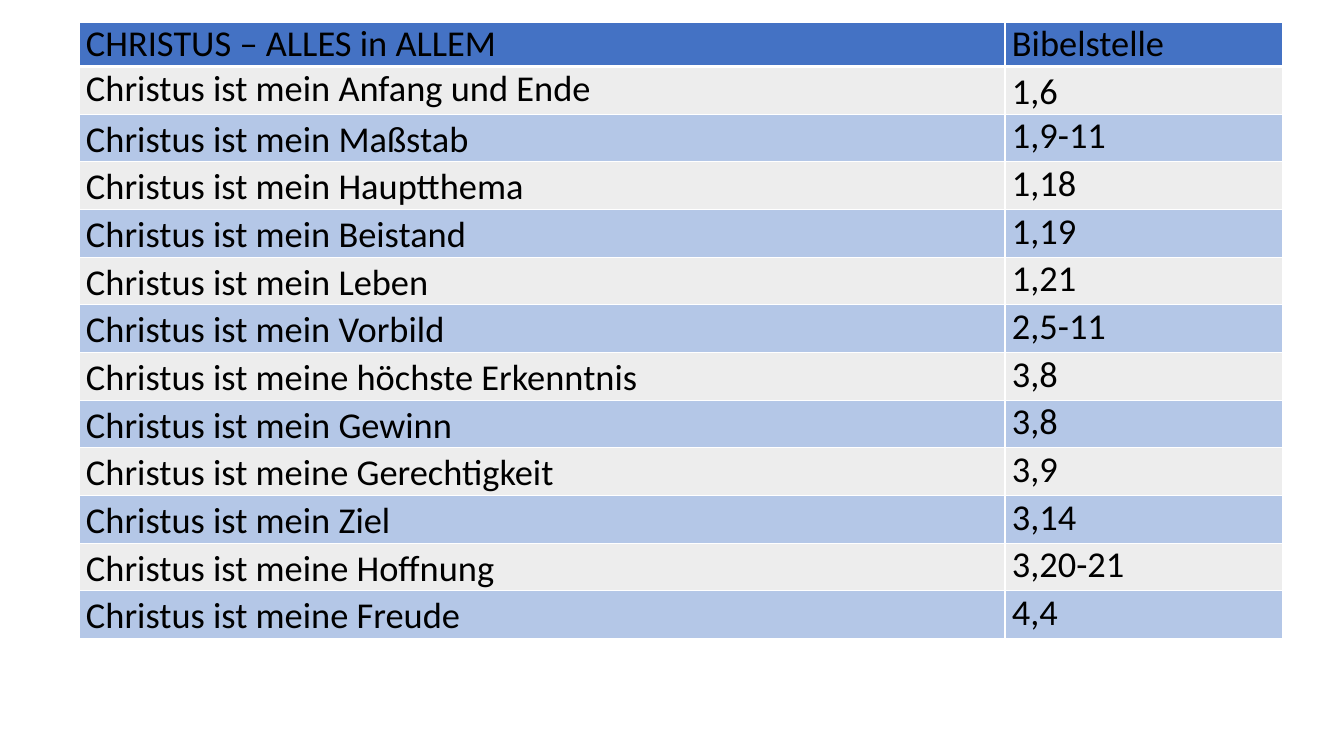
from lxml import etree
from pptx import Presentation
from pptx.dml.color import RGBColor
from pptx.oxml.ns import qn
from pptx.util import Pt

EMU_PER_PX = 12192000 / 1344
BLANK_LAYOUT = 6
FONT = "Calibri"
FONT_SIZE = 26
LOOSE_SPACING = 1.07
COLORS = {
    "text": "000000",
    "border": "FFFFFF",
    "header": "4472C4",
    "light": "EDEDED",
    "blue": "B4C7E7",
}
COLUMN_WIDTHS = (926, 278)
HEADER_HEIGHT = 41
ROW_HEIGHT = 42
HEADER = ("CHRISTUS – ALLES in ALLEM", "Bibelstelle")
VERSES = (
    ("Christus ist mein Anfang und Ende", "1,6"),
    ("Christus ist mein Maßstab", "1,9-11"),
    ("Christus ist mein Hauptthema", "1,18"),
    ("Christus ist mein Beistand", "1,19"),
    ("Christus ist mein Leben", "1,21"),
    ("Christus ist mein Vorbild", "2,5-11"),
    ("Christus ist meine höchste Erkenntnis", "3,8"),
    ("Christus ist mein Gewinn", "3,8"),
    ("Christus ist meine Gerechtigkeit", "3,9"),
    ("Christus ist mein Ziel", "3,14"),
    ("Christus ist meine Hoffnung", "3,20-21"),
    ("Christus ist meine Freude", "4,4"),
)


def px(length):
    return round(length * EMU_PER_PX)


def set_borders(cell, top=1, bottom=1):
    """Draw the four cell edges; the lines must come before the fill in the XML."""
    properties = cell._tc.get_or_add_tcPr()
    edges = (("a:lnL", 1), ("a:lnR", 1), ("a:lnT", top), ("a:lnB", bottom))
    for position, (tag, width) in enumerate(edges):
        line = etree.Element(qn(tag), w=str(Pt(width)))
        fill = etree.SubElement(line, qn("a:solidFill"))
        etree.SubElement(fill, qn("a:srgbClr"), val=COLORS["border"])
        properties.insert(position, line)


def fill_cell(cell, text, color, line_spacing=None):
    cell.fill.solid()
    cell.fill.fore_color.rgb = RGBColor.from_string(COLORS[color])
    cell.margin_left = cell.margin_right = px(7)
    cell.margin_top = cell.margin_bottom = 0
    paragraph = cell.text_frame.paragraphs[0]
    if line_spacing:
        paragraph.line_spacing = line_spacing
    run = paragraph.add_run()
    run.text = text
    run.font.name = FONT
    run.font.size = Pt(FONT_SIZE)
    run.font.bold = False
    run.font.color.rgb = RGBColor.from_string(COLORS["text"])


def add_verse_table(slide, left, top):
    height = HEADER_HEIGHT + ROW_HEIGHT * len(VERSES)
    table = slide.shapes.add_table(
        len(VERSES) + 1, len(HEADER),
        px(left), px(top), px(sum(COLUMN_WIDTHS)), px(height),
    ).table
    for column, width in zip(table.columns, COLUMN_WIDTHS):
        column.width = px(width)

    table.rows[0].height = px(HEADER_HEIGHT)
    for column_index, text in enumerate(HEADER):
        cell = table.cell(0, column_index)
        fill_cell(cell, text, "header")
        set_borders(cell, bottom=3)

    for row_index, verse in enumerate(VERSES, start=1):
        table.rows[row_index].height = px(ROW_HEIGHT)
        color = "light" if row_index % 2 else "blue"
        loose_column = 1 if row_index == 1 else 0
        for column_index, text in enumerate(verse):
            cell = table.cell(row_index, column_index)
            spacing = LOOSE_SPACING if column_index == loose_column else None
            fill_cell(cell, text, color, spacing)
            set_borders(cell, top=3 if row_index == 1 else 1)


def main():
    presentation = Presentation()
    presentation.slide_width = px(1344)
    presentation.slide_height = px(756)
    slide = presentation.slides.add_slide(presentation.slide_layouts[BLANK_LAYOUT])
    add_verse_table(slide, left=79, top=22)
    presentation.save("out.pptx")


if __name__ == "__main__":
    main()
